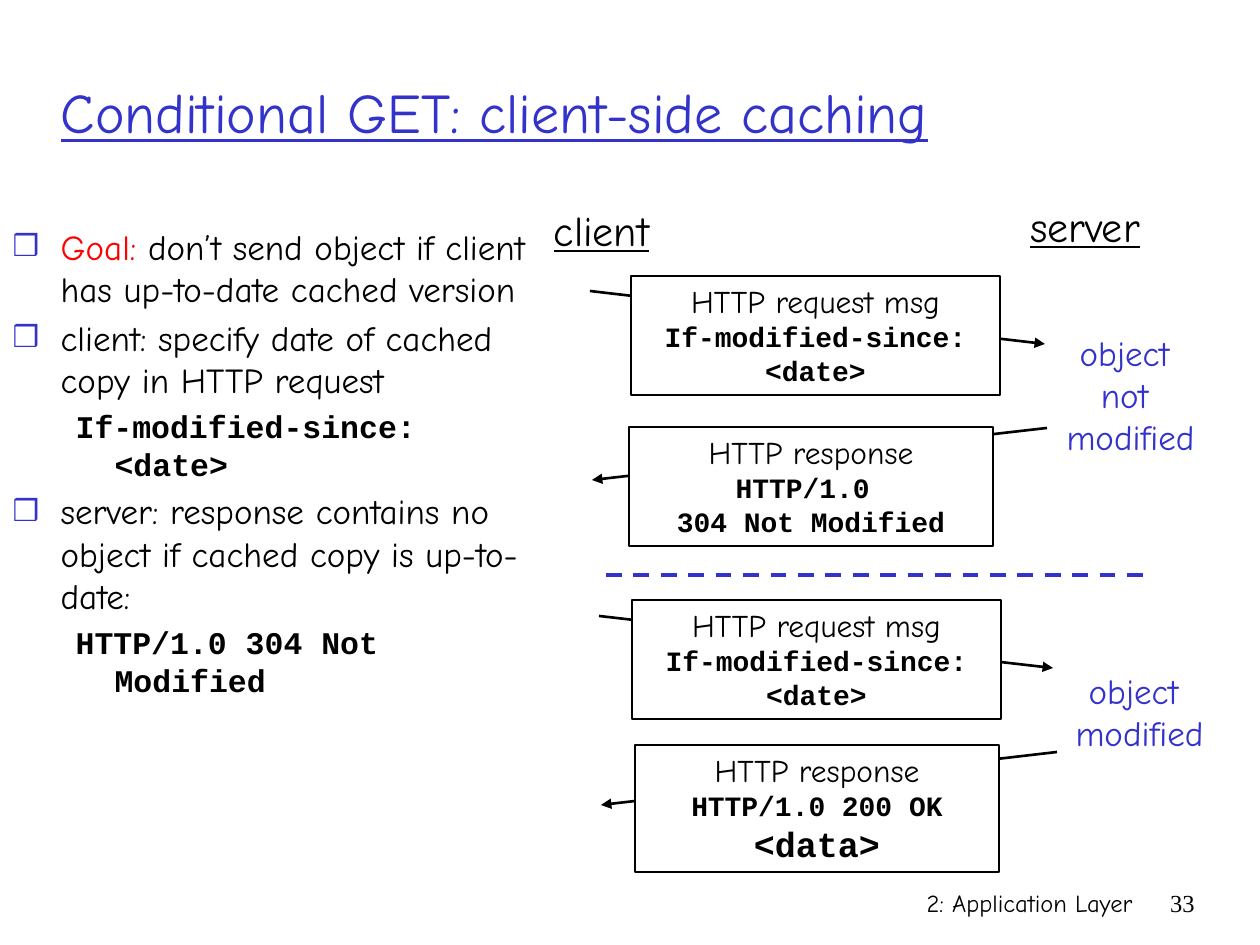
from dataclasses import dataclass

from lxml.etree import SubElement
from pptx import Presentation
from pptx.dml.color import RGBColor as RGB
from pptx.enum.dml import MSO_LINE_DASH_STYLE as Dash
from pptx.enum.shapes import MSO_CONNECTOR as Connector, MSO_SHAPE as Shape
from pptx.enum.text import MSO_ANCHOR as Anchor, MSO_AUTO_SIZE as Fit, PP_ALIGN as Align
from pptx.oxml.ns import qn
from pptx.util import Emu, Pt


@dataclass(frozen=True)
class Style:
    """Look of one run of text."""
    size: int
    color: str = "000000"
    font: str = "Comic Neue"
    bold: bool = False
    underline: bool = False


@dataclass(frozen=True)
class Theme:
    """Colours and text styles of the slide."""
    ink: str = "000000"
    paper: str = "FFFFFF"
    accent: str = "3333CC"
    title: Style = Style(32, "3333CC", underline=True)
    body: Style = Style(20)
    goal: Style = Style(20, "FF0000")
    body_code: Style = Style(18, font="Courier New", bold=True)
    host: Style = Style(24, underline=True)
    message: Style = Style(18)
    code: Style = Style(16, font="Courier New", bold=True)
    data: Style = Style(20, font="Courier New", bold=True)
    outcome: Style = Style(20, "3333CC")
    footer: Style = Style(14)
    number: Style = Style(14, font="Times New Roman")


THEME = Theme()
REQUEST = [("HTTP request msg", THEME.message), ("If-modified-since: <date>", THEME.code)]


def px(n):
    """Turn pixels into EMU."""
    return Emu(round(n * 914400 / 126))


def place(sp, box):
    """Move and size a shape."""
    sp.left, sp.top, sp.width, sp.height = map(px, box)


def style_run(r, style):
    """Apply a style to a run."""
    f = r.font
    f.name, f.size, f.bold, f.underline = style.font, Pt(style.size), style.bold, style.underline
    f.color.rgb = RGB.from_string(style.color)


def write(tf, lines, align=Align.CENTER):
    """Write one styled paragraph for each line."""
    tf.text = "\n".join(text for text, _ in lines)
    for p, (_, style) in zip(tf.paragraphs, lines):
        p.alignment = align
        style_run(p.runs[0], style)


def set_bullet(p, marked):
    """Set the indent and the bullet of a body paragraph."""
    pPr = p._p.get_or_add_pPr()
    left, hang = (px(48), px(48)) if marked else (px(102), px(39))
    pPr.set("marL", str(left))
    pPr.set("indent", str(-hang))
    if marked:
        color = SubElement(pPr, qn("a:buClr"))
        SubElement(color, qn("a:srgbClr"), val=THEME.accent)
        SubElement(pPr, qn("a:buSzPct"), val="85000")
        SubElement(pPr, qn("a:buChar"), char="❒")
    else:
        SubElement(pPr, qn("a:buNone"))


def add_title(s, text, box):
    """Fill the title placeholder."""
    sp = s.shapes.title
    place(sp, box)
    tf = sp.text_frame
    tf.auto_size, tf.vertical_anchor = Fit.NONE, Anchor.MIDDLE
    write(tf, [(text, THEME.title)], Align.LEFT)


def add_body(s, items, box):
    """Fill the body placeholder with bullets and code lines."""
    sp = s.placeholders[1]
    place(sp, box)
    tf = sp.text_frame
    tf.auto_size = Fit.NONE
    for i, (level, runs) in enumerate(items):
        p = tf.add_paragraph() if i else tf.paragraphs[0]
        p.level = level
        set_bullet(p, level == 0)
        p.space_before = Pt(4 if i else 0)
        for text, style in runs:
            r = p.add_run()
            r.text = text
            style_run(r, style)


def add_label(s, lines, box, align=Align.CENTER, wrap=False):
    """Add a plain text box."""
    tf = s.shapes.add_textbox(*map(px, box)).text_frame
    tf.word_wrap = wrap
    write(tf, lines, align)


def add_line(s, start, end, color=THEME.ink, width=1.5, dashed=False):
    """Add an arrow, or a dashed divider."""
    c = s.shapes.add_connector(Connector.STRAIGHT, *map(px, start + end))
    c.line.color.rgb = RGB.from_string(color)
    c.line.width = Pt(width)
    if dashed:
        c.line.dash_style = Dash.DASH
    else:
        SubElement(c.line._get_or_add_ln(), qn("a:tailEnd"), type="triangle")
    SubElement(c._element.spPr, qn("a:effectLst"))


def add_message(s, lines, box, start, end):
    """Add an arrow with its message box over it."""
    add_line(s, start, end)
    sp = s.shapes.add_shape(Shape.RECTANGLE, *map(px, box))
    sp.shadow.inherit = False
    sp.fill.solid()
    sp.fill.fore_color.rgb = RGB.from_string(THEME.paper)
    sp.line.color.rgb = RGB.from_string(THEME.ink)
    sp.line.width = Pt(0.75)
    tf = sp.text_frame
    tf.word_wrap, tf.vertical_anchor = True, Anchor.TOP
    write(tf, lines)


def main():
    """Build the slide and save it."""
    t = THEME
    prs = Presentation()
    prs.slide_width, prs.slide_height = px(1260), px(945)
    s = prs.slides.add_slide(prs.slide_layouts[1])

    add_title(s, "Conditional GET: client-side caching", (48, 32, 1097, 158))
    add_body(s, [
        (0, [("Goal:", t.goal),
             (" don’t send object if client has up-to-date cached version", t.body)]),
        (0, [("client: specify date of cached copy in HTTP request", t.body)]),
        (1, [("If-modified-since: <date>", t.body_code)]),
        (0, [("server: response contains no object if cached copy is up-to-date:", t.body)]),
        (1, [("HTTP/1.0 304 Not Modified", t.body_code)]),
    ], (0, 219, 557, 593))

    add_label(s, [("client", t.host)], (534, 198, 135, 63))
    add_label(s, [("server", t.host)], (1009, 194, 152, 63))

    not_modified = [("HTTP response", t.message), ("HTTP/1.0 ", t.code),
                    ("304 Not Modified", t.code)]
    modified = [("HTTP response", t.message), ("HTTP/1.0 200 OK", t.code), ("<data>", t.data)]
    for lines, box, start, end in (
        (REQUEST, (631, 276, 369, 119), (590, 291), (1045, 344)),
        (not_modified, (629, 427, 364, 119), (1047, 428), (592, 480)),
        (REQUEST, (632, 600, 369, 119), (599, 616), (1053, 668)),
        (modified, (635, 745, 364, 127), (1057, 752), (601, 805)),
    ):
        add_message(s, lines, box, start, end)
    add_line(s, (606, 575), (1144, 575), t.accent, 2.25, dashed=True)

    for words, box in ((("object ", "not ", "modified"), (1046, 325, 169, 139)),
                       (("object ", "modified"), (1055, 663, 169, 97))):
        add_label(s, [(word, t.outcome) for word in words], box)

    add_label(s, [("2: Application Layer", t.footer)], (746, 882, 399, 63), Align.RIGHT, True)
    add_label(s, [("33", t.number)], (1144, 882, 63, 63), Align.RIGHT, True)
    prs.save("out.pptx")


if __name__ == "__main__":
    main()
